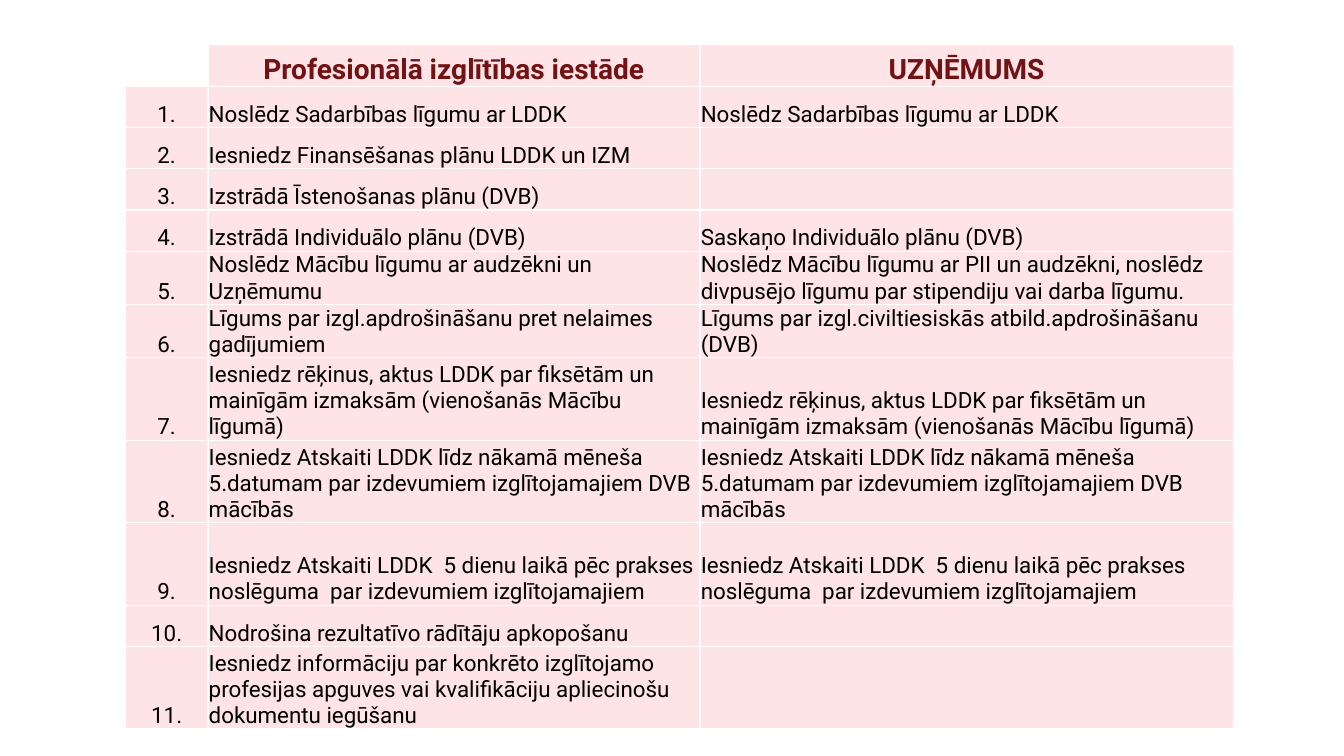
"""Build a slide comparing the duties of a vocational school and a company."""
from dataclasses import dataclass

from lxml import etree
from pptx import Presentation
from pptx.dml.color import RGBColor
from pptx.enum.text import MSO_ANCHOR, PP_ALIGN
from pptx.oxml.ns import qn
from pptx.table import _Cell
from pptx.util import Cm, Pt

BOTTOM = MSO_ANCHOR.BOTTOM
CENTER = PP_ALIGN.CENTER
LEFT = PP_ALIGN.LEFT

COLORS = {"heading": "721214", "body": "000000", "cell": "FEE4E6", "grid": "FFFFFF"}
FONT = "Roboto"
COLUMN_WIDTHS = (2.08, 12.4, 13.44)
SINGLE, MEDIUM, TALL = 1.04, 1.34, 2.08
HEADINGS = ("", "Profesionālā izglītības iestāde", "UZŅĒMUMS")

AGREEMENT = "Noslēdz Sadarbības līgumu ar LDDK"
INVOICES = (
    "Iesniedz rēķinus, aktus LDDK par fiksētām un mainīgām izmaksām "
    "(vienošanās Mācību līgumā)"
)
MONTHLY_REPORT = (
    "Iesniedz Atskaiti LDDK līdz nākamā mēneša 5.datumam par izdevumiem "
    "izglītojamajiem DVB mācībās"
)
PRACTICE_REPORT = (
    "Iesniedz Atskaiti LDDK  5 dienu laikā pēc prakses noslēguma  "
    "par izdevumiem izglītojamajiem"
)


@dataclass(frozen=True)
class Step:
    """One numbered step and the duty of each party."""

    school: str
    company: str = ""
    height: float = SINGLE


STEPS = (
    Step(AGREEMENT, AGREEMENT),
    Step("Iesniedz Finansēšanas plānu LDDK un IZM"),
    Step("Izstrādā Īstenošanas plānu (DVB)"),
    Step("Izstrādā Individuālo plānu (DVB)", "Saskaņo Individuālo plānu (DVB)"),
    Step(
        "Noslēdz Mācību līgumu ar audzēkni un Uzņēmumu",
        "Noslēdz Mācību līgumu ar PII un audzēkni, noslēdz divpusējo līgumu "
        "par stipendiju vai darba līgumu.",
        MEDIUM,
    ),
    Step(
        "Līgums par izgl.apdrošināšanu pret nelaimes gadījumiem",
        "Līgums par izgl.civiltiesiskās atbild.apdrošināšanu (DVB)",
        MEDIUM,
    ),
    Step(INVOICES, INVOICES, TALL),
    Step(MONTHLY_REPORT, MONTHLY_REPORT, TALL),
    Step(PRACTICE_REPORT, PRACTICE_REPORT, TALL),
    Step("Nodrošina rezultatīvo rādītāju apkopošanu"),
    Step(
        "Iesniedz informāciju par konkrēto izglītojamo profesijas apguves vai "
        "kvalifikāciju apliecinošu dokumentu iegūšanu",
        height=TALL,
    ),
)


def write_text(
    cell: _Cell,
    text: str,
    *,
    size: int = 16,
    color: str = "body",
    bold: bool = False,
    align: PP_ALIGN = LEFT,
) -> None:
    """Write one formatted paragraph into a cell."""
    paragraph = cell.text_frame.paragraphs[0]
    paragraph.alignment = align
    run = paragraph.add_run()
    run.text = text
    run.font.name = FONT
    run.font.size = Pt(size)
    run.font.bold = bold
    run.font.color.rgb = RGBColor.from_string(COLORS[color])


def format_cell(cell: _Cell, filled: bool) -> None:
    """Set the margins, grid lines and fill of a cell."""
    cell.vertical_anchor = BOTTOM
    cell.margin_left = cell.margin_right = cell.margin_top = Cm(0.02)
    cell.margin_bottom = Cm(0)
    properties = cell._tc.get_or_add_tcPr()
    for side in ("a:lnL", "a:lnR", "a:lnT", "a:lnB"):
        border = etree.SubElement(properties, qn(side), w=str(Pt(1)))
        line_fill = etree.SubElement(border, qn("a:solidFill"))
        etree.SubElement(line_fill, qn("a:srgbClr"), val=COLORS["grid"])
    if filled:
        cell.fill.solid()
        cell.fill.fore_color.rgb = RGBColor.from_string(COLORS["cell"])
    else:
        cell.fill.background()


def main() -> None:
    """Build and save the presentation."""
    presentation = Presentation()
    presentation.slide_width, presentation.slide_height = Cm(33.87), Cm(19.05)
    slide = presentation.slides.add_slide(presentation.slide_layouts[6])

    heights = [SINGLE] + [step.height for step in STEPS]
    duties = slide.shapes.add_table(
        len(heights), len(COLUMN_WIDTHS),
        Cm(3.16), Cm(1.13), Cm(sum(COLUMN_WIDTHS)), Cm(sum(heights)),
    ).table
    duties.horz_banding = False
    for column, width in zip(duties.columns, COLUMN_WIDTHS):
        column.width = Cm(width)
    for row, height in zip(duties.rows, heights):
        row.height = Cm(height)

    entries = [HEADINGS] + [
        (f"{number}.", step.school, step.company)
        for number, step in enumerate(STEPS, 1)
    ]
    for row_index, texts in enumerate(entries):
        for column_index, text in enumerate(texts):
            cell = duties.cell(row_index, column_index)
            format_cell(cell, filled=row_index + column_index > 0)
            if not text:
                continue
            if row_index == 0:
                write_text(cell, text, size=20, color="heading", bold=True, align=CENTER)
            else:
                write_text(cell, text, align=LEFT if column_index else CENTER)

    presentation.save("out.pptx")


if __name__ == "__main__":
    main()
